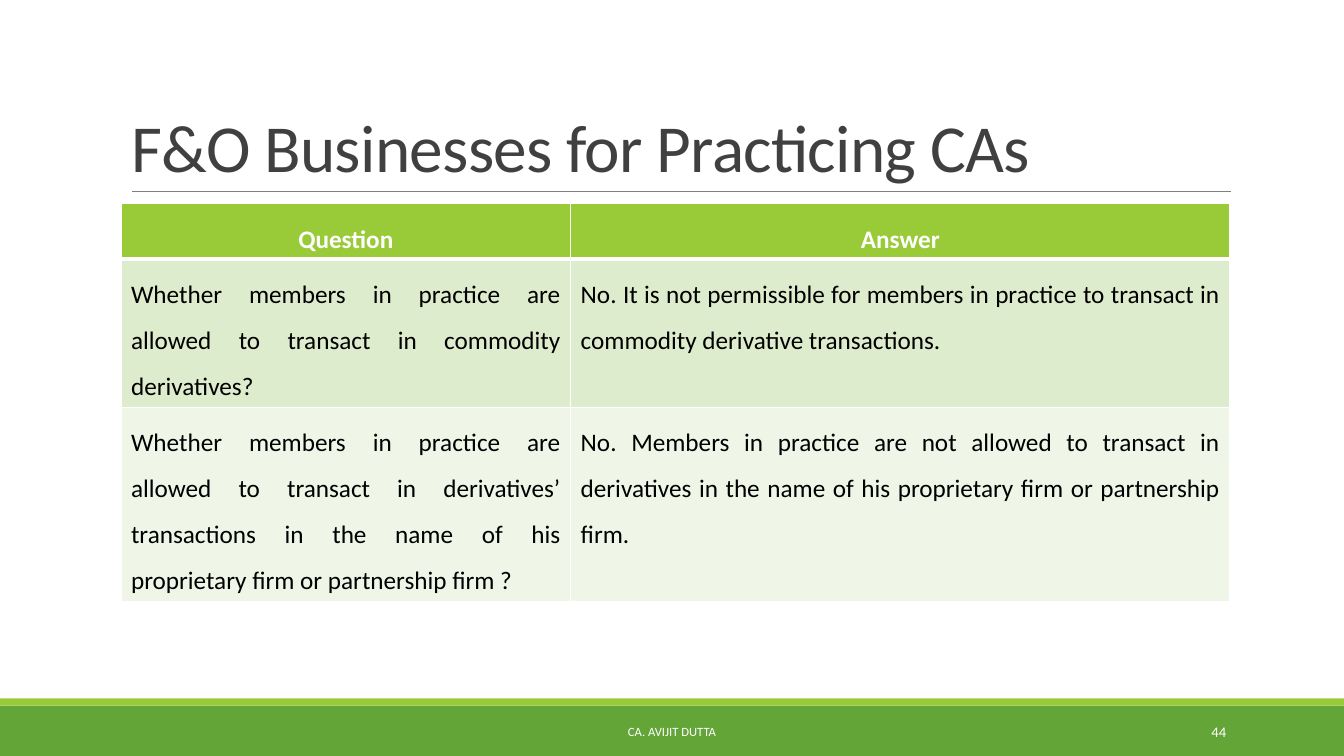
from lxml.etree import SubElement
from pptx import Presentation
from pptx.dml.color import RGBColor
from pptx.enum.shapes import MSO_CONNECTOR, MSO_SHAPE
from pptx.enum.text import MSO_ANCHOR, MSO_AUTO_SIZE, PP_ALIGN
from pptx.oxml.ns import qn
from pptx.util import Inches, Pt

COLORS = {
    "green": "63A537", "lime": "99CB38", "rule": "808080", "title": "404040",
    "white": "FFFFFF", "black": "000000", "band_dark": "DEECCE", "band_light": "EFF6E8",
}


def rgb(name):
    return RGBColor.from_string(COLORS[name])


def write(frame, text, size, color, align=PP_ALIGN.LEFT, bold=False, line_spacing=1.0, tracking=0):
    """Fill a text frame with one formatted run; tracking is in hundredths of a point."""
    frame.word_wrap = True
    paragraph = frame.paragraphs[0]
    paragraph.alignment = align
    paragraph.line_spacing = line_spacing
    run = paragraph.add_run()
    run.text = text
    run.font.name = "Calibri"
    run.font.size = Pt(size)
    run.font.bold = bold
    run.font.color.rgb = rgb(color)
    if tracking:
        run.font._element.set("spc", str(tracking))


prs = Presentation()
prs.slide_width, prs.slide_height = Inches(13.33), Inches(7.5)
slide = prs.slides.add_slide(prs.slide_layouts[5])
shapes = slide.shapes

# Footer bands
for top, height, color in [(7, 0.5, "green"), (6.93, 0.07, "lime")]:
    band = shapes.add_shape(MSO_SHAPE.RECTANGLE, 0, Inches(top), prs.slide_width, Inches(height))
    band.shadow.inherit = False
    band.fill.solid()
    band.fill.fore_color.rgb = rgb(color)
    band.line.fill.background()

# Title and the rule below it
title = shapes.title
title.left, title.top, title.width, title.height = map(Inches, (1.2, 0.31, 11, 1.59))
title.text_frame.vertical_anchor = MSO_ANCHOR.BOTTOM
title.text_frame.auto_size = MSO_AUTO_SIZE.NONE
write(title.text_frame, "F&O Businesses for Practicing CAs", 48, "title",
      line_spacing=0.85, tracking=-50)

title_rule = shapes.add_connector(
    MSO_CONNECTOR.STRAIGHT, Inches(1.31), Inches(1.9), Inches(12.21), Inches(1.9))
title_rule.line.color.rgb = rgb("rule")
title_rule.line.width = Pt(0.5)
SubElement(title_rule._element.spPr, qn("a:effectLst"))

# Author and page number
for text, left, width, size, align in [
    ("CA. AVIJIT DUTTA", 4.03, 5.27, 9, PP_ALIGN.CENTER),
    ("44", 10.83, 1.43, 10.5, PP_ALIGN.RIGHT),
]:
    footer = shapes.add_textbox(Inches(left), Inches(7.06), Inches(width), Inches(0.4))
    footer.text_frame.vertical_anchor = MSO_ANCHOR.MIDDLE
    write(footer.text_frame, text, size, "white", align)

# Questions and answers: text, row height, fill
qa_rows = [
    (("Question", "Answer"), 0.55, "lime"),
    (("Whether members in practice are allowed to transact in commodity derivatives?",
      "No. It is not permissible for members in practice to transact in commodity "
      "derivative transactions."), 1.47, "band_dark"),
    (("Whether members in practice are allowed to transact in derivatives’ transactions "
      "in the name of his proprietary firm or partnership firm ?",
      "No. Members in practice are not allowed to transact in derivatives in the name of "
      "his proprietary firm or partnership firm."), 1.93, "band_light"),
]
qa_table = shapes.add_table(
    len(qa_rows), 2, Inches(1.2), Inches(2.02), Inches(11), Inches(3.95)).table
for column, width in zip(qa_table.columns, (4.46, 6.54)):
    column.width = Inches(width)

for row, (texts, height, fill) in enumerate(qa_rows):
    is_header = row == 0
    qa_table.rows[row].height = Inches(height)
    for col, text in enumerate(texts):
        cell = qa_table.cell(row, col)
        write(cell.text_frame, text, 18, "white" if is_header else "black",
              PP_ALIGN.CENTER if is_header else PP_ALIGN.JUSTIFY,
              bold=is_header, line_spacing=1.5)
        cell_props = cell._tc.get_or_add_tcPr()
        for side in "LRTB":
            thick = (is_header and side == "B") or (row == 1 and side == "T")
            border = SubElement(cell_props, qn(f"a:ln{side}"), w=str(Pt(3 if thick else 1)))
            border_fill = SubElement(border, qn("a:solidFill"))
            SubElement(border_fill, qn("a:srgbClr"), val=COLORS["white"])
        cell.fill.solid()
        cell.fill.fore_color.rgb = rgb(fill)

prs.save("out.pptx")
